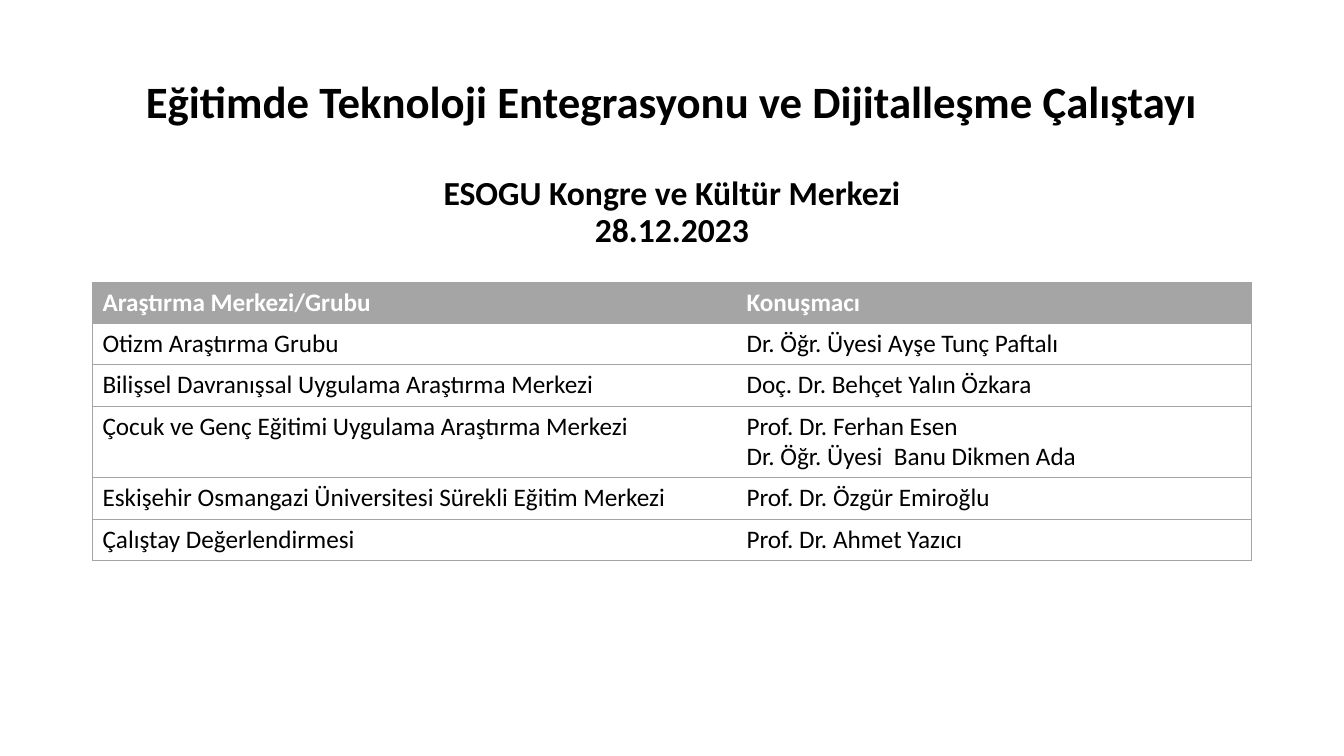
from lxml.etree import SubElement
from pptx import Presentation
from pptx.dml.color import RGBColor
from pptx.enum.text import MSO_ANCHOR as Anchor, PP_ALIGN as Align
from pptx.oxml.ns import qn
from pptx.util import Cm, Pt

COLORS = {"text": "000000", "header_text": "FFFFFF", "grid": "A5A5A5"}
FONT = "Calibri"

LEFT, WIDTH = 2.33, 29.21
COLUMN_WIDTHS = (16.23, 12.98)
ROW_HEIGHT, LINE_HEIGHT = 1.04, 0.77

HEADING = "Eğitimde Teknoloji Entegrasyonu ve Dijitalleşme Çalıştayı"
VENUE_AND_DATE = "ESOGU Kongre ve Kültür Merkezi\v28.12.2023"
PROGRAMME = [
    ("Araştırma Merkezi/Grubu", "Konuşmacı"),
    ("Otizm Araştırma Grubu", "Dr. Öğr. Üyesi Ayşe Tunç Paftalı"),
    ("Bilişsel Davranışsal Uygulama Araştırma Merkezi", "Doç. Dr. Behçet Yalın Özkara"),
    ("Çocuk ve Genç Eğitimi Uygulama Araştırma Merkezi",
     "Prof. Dr. Ferhan Esen\nDr. Öğr. Üyesi  Banu Dikmen Ada"),
    ("Eskişehir Osmangazi Üniversitesi Sürekli Eğitim Merkezi", "Prof. Dr. Özgür Emiroğlu"),
    ("Çalıştay Değerlendirmesi", "Prof. Dr. Ahmet Yazıcı"),
]


def set_all(target, values):
    for attribute, value in values.items():
        setattr(target, attribute, value)


def style_font(paragraph, size, color, bold):
    set_all(paragraph.font, {"name": FONT, "size": Pt(size), "bold": bold})
    paragraph.font.color.rgb = RGBColor.from_string(COLORS[color])


def add_title(slide):
    box = slide.shapes.add_textbox(Cm(LEFT), Cm(2.77), Cm(WIDTH), Cm(3.68))
    frame = box.text_frame
    set_all(frame, {"word_wrap": True, "vertical_anchor": Anchor.MIDDLE,
                    "margin_bottom": Cm(1.06)})
    frame.text = f"{HEADING}\n"
    heading, details = frame.paragraphs
    details.text = VENUE_AND_DATE
    for paragraph, size, gap in ((heading, 32, 0), (details, 24, 35)):
        set_all(paragraph, {"alignment": Align.CENTER, "line_spacing": 0.9,
                            "space_before": Pt(gap)})
        style_font(paragraph, size, "text", True)


def set_borders(cell, visible):
    """Draw the sides named in visible (letters of LRTB) and blank the others."""
    properties = cell._tc.get_or_add_tcPr()
    for side in "LRTB":
        line = SubElement(properties, qn(f"a:ln{side}"), w=str(Pt(0.5)))
        if side in visible:
            fill = SubElement(line, qn("a:solidFill"))
            SubElement(fill, qn("a:srgbClr"), val=COLORS["grid"])
        else:
            SubElement(line, qn("a:noFill"))


def fill_cell(cell, text, outer_side, is_header):
    cell.text = text
    for paragraph in cell.text_frame.paragraphs:
        style_font(paragraph, 18, "header_text" if is_header else "text", is_header)
    set_borders(cell, outer_side + "TB")
    if is_header:
        cell.fill.solid()
        cell.fill.fore_color.rgb = RGBColor.from_string(COLORS["grid"])
    else:
        cell.fill.background()


def add_programme(slide):
    heights = [ROW_HEIGHT + LINE_HEIGHT * speakers.count("\n") for _, speakers in PROGRAMME]
    table = slide.shapes.add_table(len(PROGRAMME), len(COLUMN_WIDTHS), Cm(LEFT), Cm(7.11),
                                   Cm(WIDTH), Cm(sum(heights))).table
    table.horz_banding = False
    for column, width in zip(table.columns, COLUMN_WIDTHS):
        column.width = Cm(width)
    for index, (entry, height) in enumerate(zip(PROGRAMME, heights)):
        row = table.rows[index]
        row.height = Cm(height)
        for cell, text, outer_side in zip(row.cells, entry, "LR"):
            fill_cell(cell, text, outer_side, index == 0)


def main():
    presentation = Presentation()
    set_all(presentation, {"slide_width": Cm(33.87), "slide_height": Cm(19.05)})
    slide = presentation.slides.add_slide(presentation.slide_layouts[6])
    add_title(slide)
    add_programme(slide)
    presentation.save("out.pptx")


if __name__ == "__main__":
    main()
